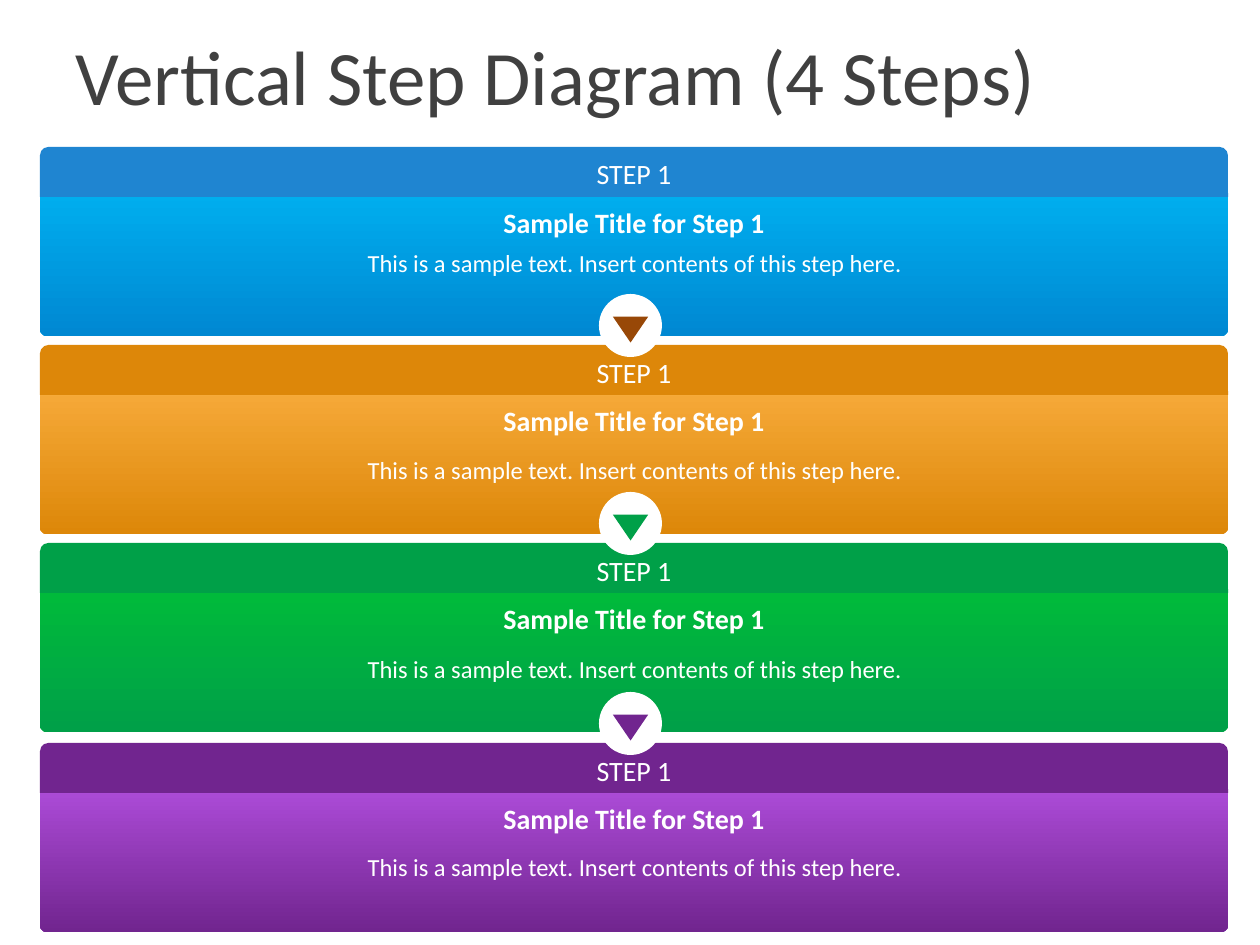
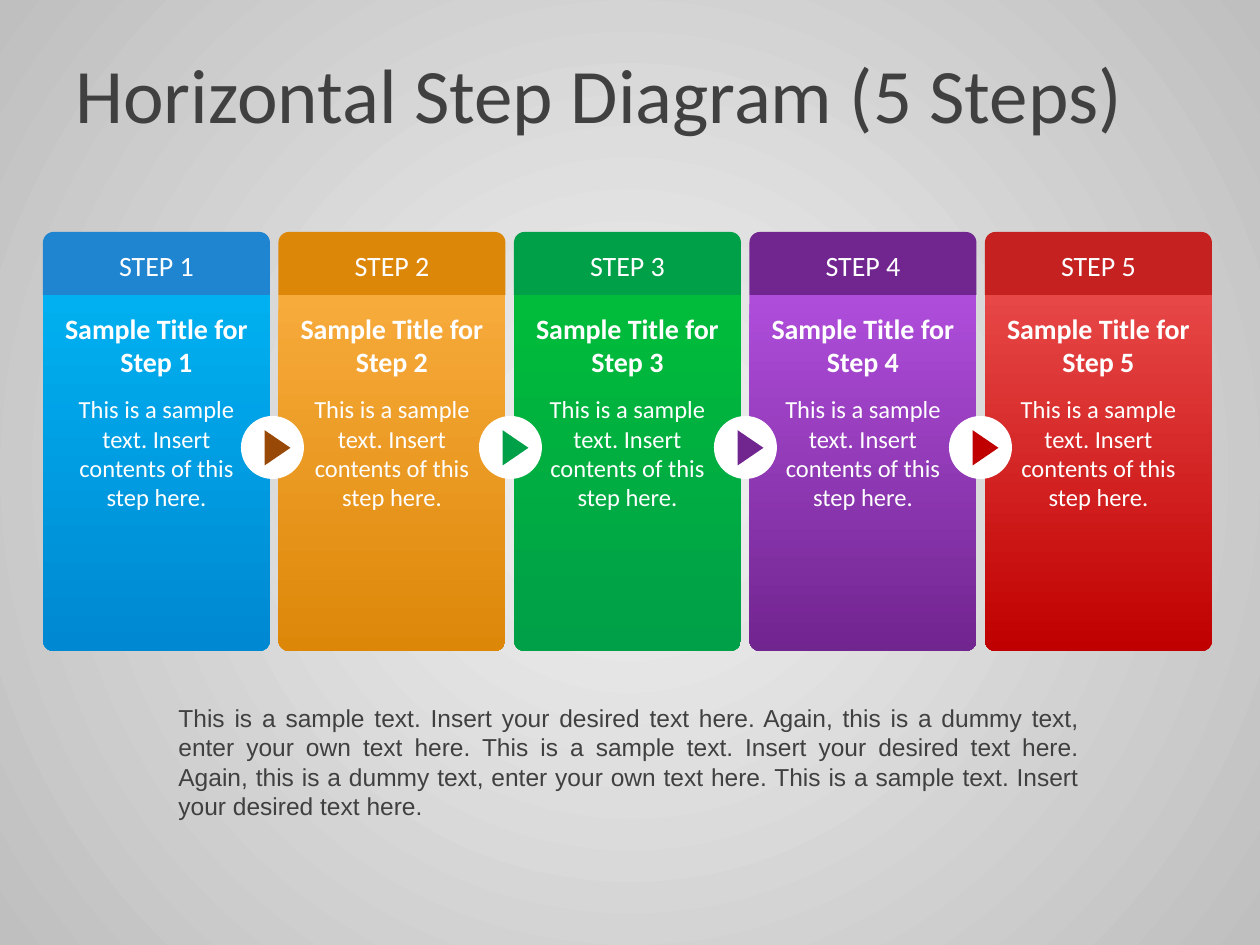
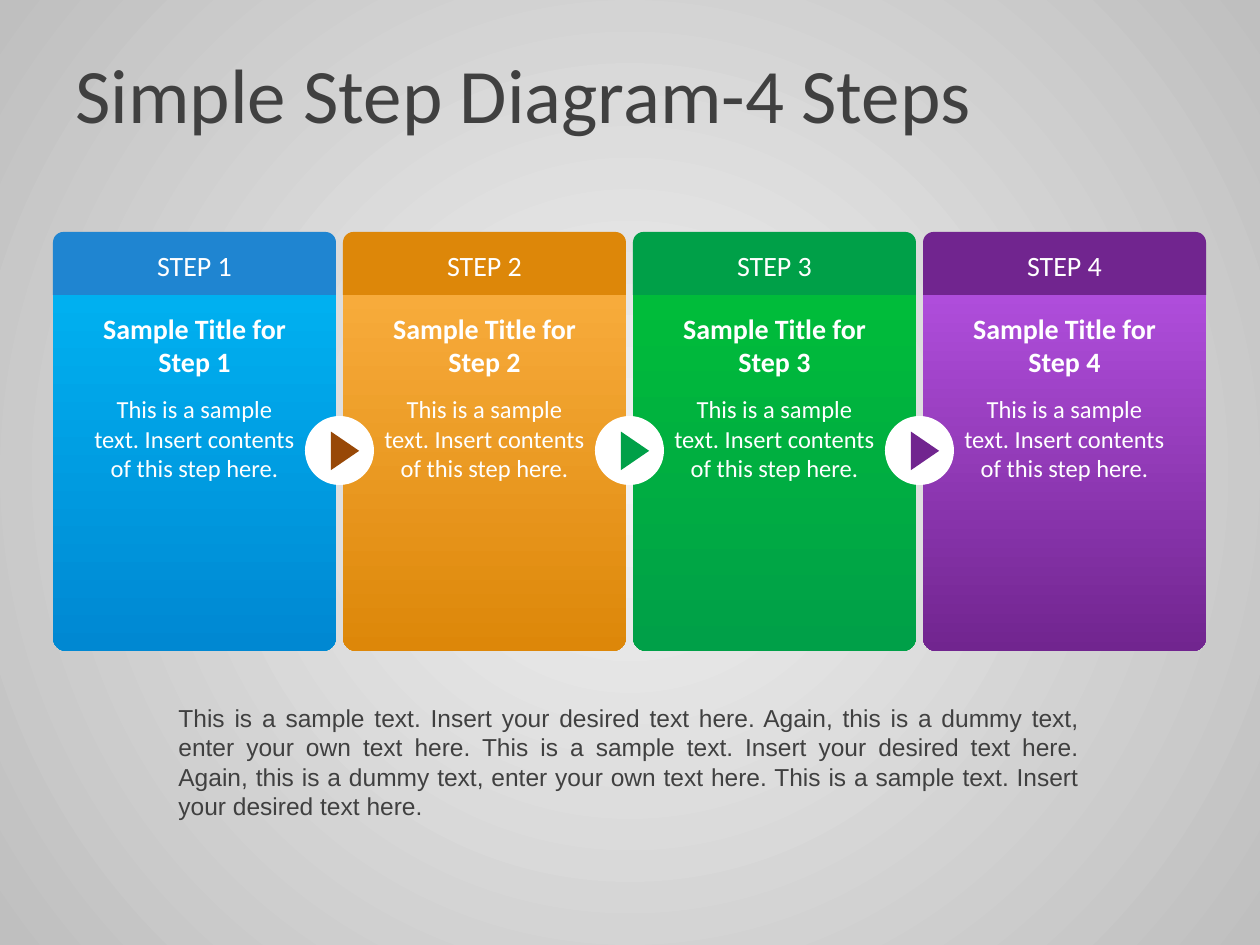
import pptx
import pptx.dml.color
import pptx.enum.shapes
import pptx.enum.text
import pptx.util
from lxml import etree
from pptx.oxml.ns import qn

SHAPE = pptx.enum.shapes.MSO_SHAPE
ALIGN = pptx.enum.text.PP_ALIGN
ANCHOR = pptx.enum.text.MSO_ANCHOR
PX = 914400 / 126

WHITE, INK = "FFFFFF", "404040"
BACKDROP = ("F2F2F2", "BFBFBF")
# header, body gradient top, body gradient bottom, arrow leading into the step
STEP_COLORS = [
    ("1F85D1", "00B0F0", "0088D2", None),
    ("DD8709", "F7AB3B", "DD8709", "984807"),
    ("00A048", "00BC3A", "00A048", "00A048"),
    ("71258F", "AF4DDB", "71258F", "71258F"),
    ("C52121", "E74747", "C00000", "C00000"),
]
STEP_TEXT = "This is a sample text. Insert contents of this step here."
CAPTION = (
    "This is a sample text. Insert your desired text here. "
    "Again, this is a dummy text, enter your own text here. "
    "This is a sample text. Insert your desired text here. "
    "Again, this is a dummy text, enter your own text here. "
    "This is a sample text. Insert your desired text here."
)

# band top, top of its text, anchor of its header
BANDS = [
    (147, 242, ANCHOR.MIDDLE),
    (345, 449, ANCHOR.BOTTOM),
    (543, 648, ANCHOR.BOTTOM),
    (743, 846, ANCHOR.BOTTOM),
]
CARD_SLIDES = [
    {"title": "Horizontal Step Diagram (5 Steps)", "left": 43, "last": 985,
     "width": 227, "badge": 63, "badge_lefts": (241, 479, 714, 949)},
    {"title": "Simple Step Diagram-4 Steps", "left": 53, "last": 923,
     "width": 283, "badge": 69, "badge_lefts": (305, 595, 885)},
]


def rgb(color):
    return pptx.dml.color.RGBColor.from_string(color)


def px(*lengths):
    return [round(n * PX) for n in lengths]


def set_gradient(fill, colors):
    fill.gradient()
    for stop, color in zip(fill.gradient_stops, colors):
        stop.color.rgb = rgb(color)


def write(sp, text, size, color=WHITE, font="Calibri", bold=False,
          align=ALIGN.CENTER, anchor=ANCHOR.TOP):
    tf = sp.text_frame
    tf.word_wrap = True
    tf.vertical_anchor = anchor
    tf.text = text
    p = tf.paragraphs[0]
    p.alignment = align
    f = p.runs[0].font
    f.size, f.name, f.bold = pptx.util.Pt(size), font, bold
    f.color.rgb = rgb(color)
    return tf


def add_text(shapes, box, text, size, **style):
    return write(shapes.add_textbox(*px(*box)), text, size, **style)


def add_shape(shapes, kind, box, *colors):
    """Add a borderless shape; two colours make a top-to-bottom gradient."""
    sp = shapes.add_shape(kind, *px(*box))
    sp.shadow.inherit = False
    sp.line.fill.background()
    if len(colors) == 2:
        set_gradient(sp.fill, colors)
        sp.fill.gradient_angle = 270
    else:
        sp.fill.solid()
        sp.fill.fore_color.rgb = rgb(colors[0])
    return sp


def add_step(slide, colors, number, head, body, title, text, anchor=ANCHOR.MIDDLE):
    """Add one grouped step; head, body, title and text are boxes."""
    shapes = slide.shapes.add_group_shape().shapes
    sp = add_shape(shapes, SHAPE.ROUND_2_SAME_RECTANGLE, body, *colors[1:3])
    sp.adjustments[0], sp.adjustments[1] = 0, 0.048
    grow = pptx.enum.text.MSO_AUTO_SIZE.SHAPE_TO_FIT_TEXT
    add_text(shapes, title, f"Sample Title for Step {number}", 16, bold=True).auto_size = grow
    add_text(shapes, text, STEP_TEXT, 14).auto_size = grow
    sp = add_shape(shapes, SHAPE.ROUND_2_SAME_RECTANGLE, head, colors[0])
    write(sp, f"STEP {number}", 16, anchor=anchor)


def add_badge(slide, left, top, size, color, rotation, dx, dy):
    """Add a white disc with an arrowhead, offset by shares of the disc size."""
    shapes = slide.shapes.add_group_shape().shapes
    add_shape(shapes, SHAPE.OVAL, (left, top, size, size), WHITE)
    box = (left + dx * size, top + dy * size, 0.56 * size, 0.41 * size)
    add_shape(shapes, SHAPE.ISOSCELES_TRIANGLE, box, color).rotation = rotation


def add_slide(prs, title, title_top):
    slide = prs.slides.add_slide(prs.slide_layouts[6])
    add_text(slide.shapes, (63, title_top, 1134, 130), title, 44, color=INK,
             align=ALIGN.LEFT, anchor=ANCHOR.MIDDLE)
    return slide


def set_radial_background(slide):
    set_gradient(slide.background.fill, BACKDROP)
    grad = next(slide.element.iter(qn("a:gradFill")))
    for lin in grad.findall(qn("a:lin")):
        grad.remove(lin)
    circle = etree.SubElement(grad, qn("a:path"), {"path": "circle"})
    etree.SubElement(circle, qn("a:fillToRect"), dict.fromkeys("ltrb", "50000"))


def build_bands(prs):
    slide = add_slide(prs, "Vertical Step Diagram (4 Steps)", 10)
    for (top, text_top, anchor), colors in zip(BANDS, STEP_COLORS):
        add_step(slide, colors, 1,
                 head=(40, top, 1188, 50), body=(40, top + 39, 1188, 150),
                 title=(89, top + 52, 1090, 50), text=(160, text_top, 950, 62),
                 anchor=anchor)
    for (top, _, _), colors in zip(BANDS[1:], STEP_COLORS[1:]):
        add_badge(slide, 599, top - 51, 63, colors[3], 180, 0.22, 0.36)


def build_cards(prs, title, left, last, width, badge, badge_lefts):
    slide = add_slide(prs, title, 28)
    set_radial_background(slide)
    pitch = (last - left) / len(badge_lefts)
    for i in range(len(badge_lefts) + 1):
        x = left + i * pitch
        add_step(slide, STEP_COLORS[i], i + 1,
                 head=(x, 232, width, 63), body=(x, 295, width, 356),
                 title=(x + 0.04 * width, 305, 0.92 * width, 81),
                 text=(x + 0.1 * width, 388, 0.8 * width, 102))
    for badge_left, colors in zip(badge_lefts, STEP_COLORS[1:]):
        add_badge(slide, badge_left, 416, badge, colors[3], 90, 0.3, 0.3)
    tf = add_text(slide.shapes, (166, 703, 926, 186), CAPTION, 14, color=INK,
                  font="Arial", align=ALIGN.JUSTIFY)
    tf.margin_top = tf.margin_bottom = 0


def main():
    prs = pptx.Presentation()
    prs.slide_width, prs.slide_height = px(1260, 945)
    build_bands(prs)
    for cards in CARD_SLIDES:
        build_cards(prs, **cards)
    prs.save("out.pptx")


if __name__ == "__main__":
    main()
